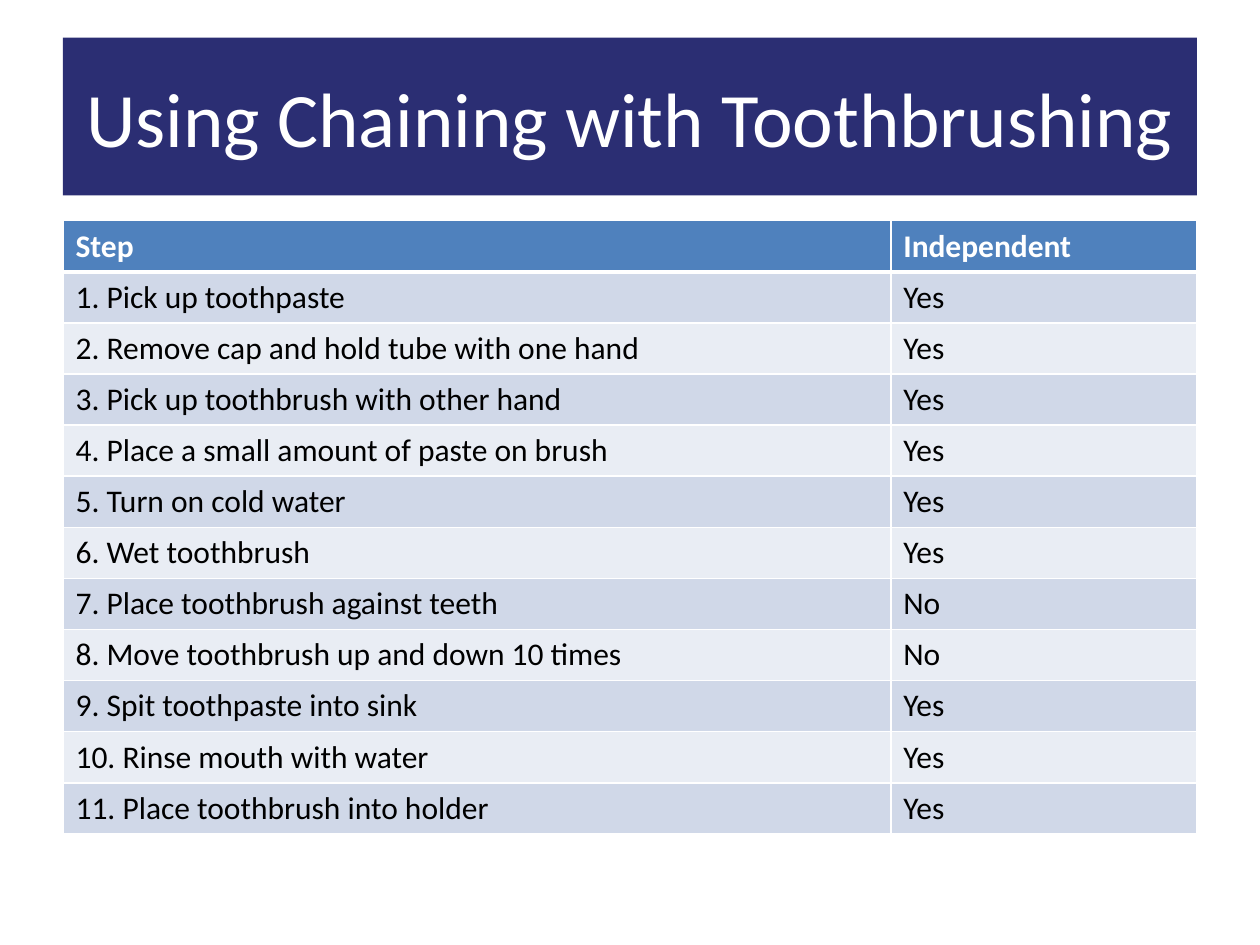
from dataclasses import dataclass

from lxml import etree
from pptx import Presentation
from pptx import util as u
from pptx.dml.color import RGBColor
from pptx.enum import shapes, text
from pptx.oxml import ns


@dataclass(frozen=True)
class Theme:
    font: str = "Calibri"
    title_size: int = 44
    table_size: int = 18
    banner: str = "2B2E73"
    header: str = "4F81BD"
    bands: tuple = ("D0D8E8", "E9EDF4")
    light: str = "FFFFFF"
    dark: str = "000000"
    rule: int = 1
    header_rule: int = 3


THEME = Theme()
TITLE = "Using Chaining with Toothbrushing"
HEADINGS = ("Step", "Independent")
STEPS = (
    ("Pick up toothpaste", "Yes"),
    ("Remove cap and hold tube with one hand", "Yes"),
    ("Pick up toothbrush with other hand", "Yes"),
    ("Place a small amount of paste on brush", "Yes"),
    ("Turn on cold water", "Yes"),
    ("Wet toothbrush", "Yes"),
    ("Place toothbrush against teeth", "No"),
    ("Move toothbrush up and down 10 times", "No"),
    ("Spit toothpaste into sink", "Yes"),
    ("Rinse mouth with water", "Yes"),
    ("Place toothbrush into holder", "Yes"),
)
STEP_SHARE = 0.73  # part of the table width taken by the step column


def paint(part, color):
    part.fill.solid()
    part.fill.fore_color.rgb = RGBColor.from_string(color)


def write(paragraph, words, size, color, bold=False):
    run = paragraph.add_run()
    run.text = words
    formats = {"name": THEME.font, "size": u.Pt(size), "bold": bold}
    for name, value in formats.items():
        setattr(run.font, name, value)
    run.font.color.rgb = RGBColor.from_string(color)


def rule_cell(cell, widths):
    """Draw the cell borders, widths in points by side."""
    properties = cell._tc.get_or_add_tcPr()
    for side, width in widths.items():
        line = etree.SubElement(properties, ns.qn(f"a:ln{side}"), w=str(u.Pt(width)))
        fill = etree.SubElement(line, ns.qn("a:solidFill"))
        etree.SubElement(fill, ns.qn("a:srgbClr"), val=THEME.light)


def add_banner(slide, left, top, width, height):
    banner = slide.shapes.add_shape(
        shapes.MSO_SHAPE.RECTANGLE, left, top, width, height)
    banner.shadow.inherit = False
    banner.line.fill.background()
    paint(banner, THEME.banner)
    frame = banner.text_frame
    frame.word_wrap = True
    frame.vertical_anchor = text.MSO_ANCHOR.MIDDLE
    heading = frame.paragraphs[0]
    heading.alignment = text.PP_ALIGN.CENTER
    write(heading, TITLE, THEME.title_size, THEME.light)


def add_step_table(slide, left, top, width, height):
    rows = [HEADINGS]
    rows += [(f"{n}. {step}", answer) for n, (step, answer) in enumerate(STEPS, 1)]
    table = slide.shapes.add_table(
        len(rows), len(HEADINGS), left, top, width, height).table
    step_width = int(width * STEP_SHARE)
    for column, column_width in zip(table.columns, (step_width, width - step_width)):
        column.width = column_width
    for r, row in enumerate(rows):
        is_header = r == 0
        fill = THEME.header if is_header else THEME.bands[(r - 1) % 2]
        color = THEME.light if is_header else THEME.dark
        borders = dict.fromkeys("LRTB", THEME.rule)
        if r < 2:  # the heavy rule between the header and the first step
            borders["B" if is_header else "T"] = THEME.header_rule
        for c, words in enumerate(row):
            cell = table.cell(r, c)
            rule_cell(cell, borders)
            paint(cell, fill)
            write(cell.text_frame.paragraphs[0], words, THEME.table_size, color, is_header)


def main():
    deck = Presentation()
    deck.slide_width, deck.slide_height = u.Cm(25.4), u.Cm(19.05)
    slide = deck.slides.add_slide(deck.slide_layouts[6])
    margin = u.Cm(1.27)
    width = deck.slide_width - 2 * margin
    # Step table, then title banner
    add_step_table(slide, margin, u.Cm(4.45), width, u.Cm(12.36))
    add_banner(slide, margin, u.Cm(0.76), width, u.Cm(3.18))
    deck.save("out.pptx")


if __name__ == "__main__":
    main()
